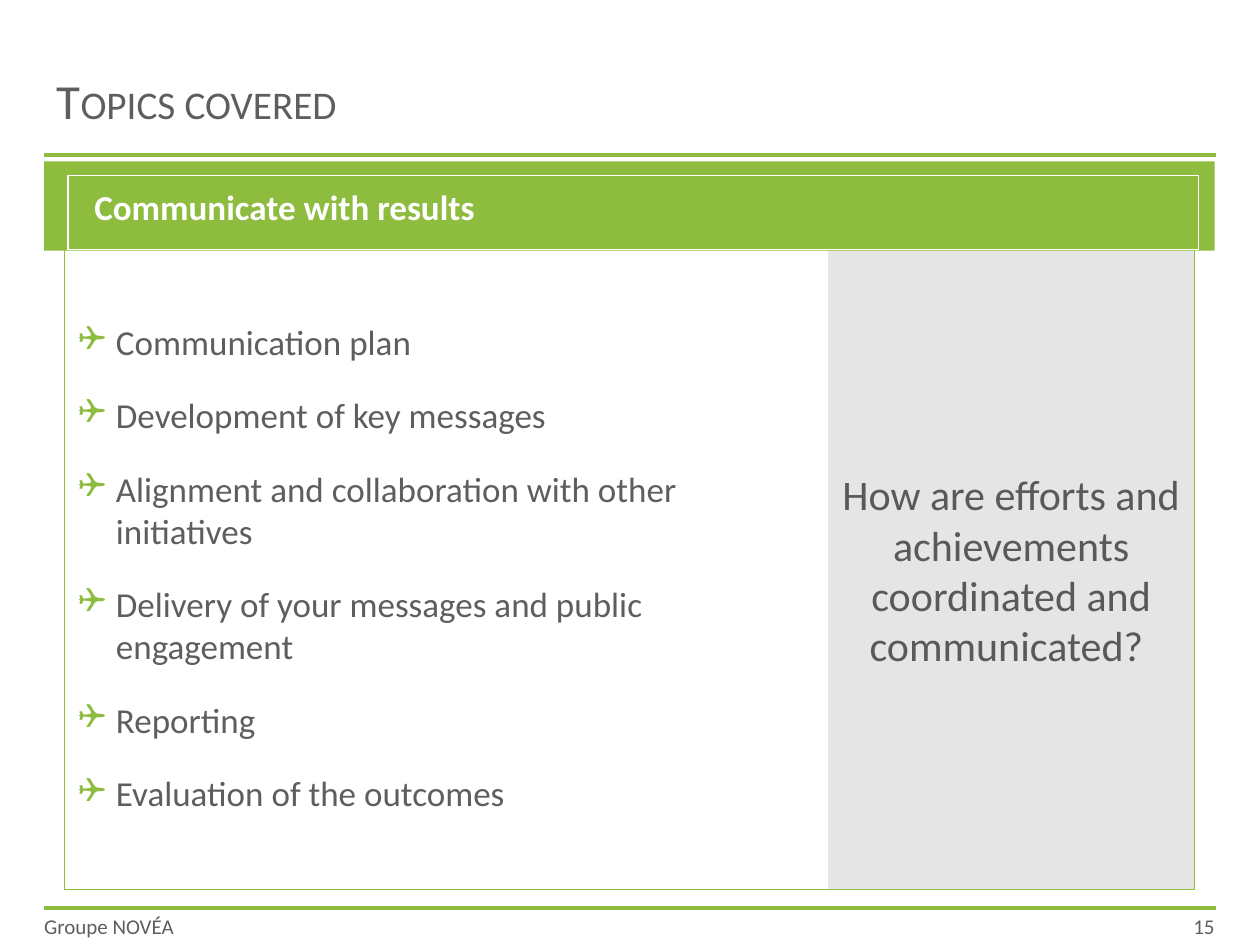
from lxml import etree
from pptx import Presentation
from pptx import util as u
from pptx.dml.color import RGBColor
from pptx.enum import shapes, text
from pptx.oxml.ns import qn

COLORS = {"green": "8EBC3F", "gray": "D9D9D9", "white": "FFFFFF",
          "ink": "5C5E5F", "question": "595959"}
TOPICS = [
    "Communication plan",
    "Development of key messages",
    "Alignment and collaboration with other initiatives",
    "Delivery of your messages and public engagement",
    "Reporting",
    "Evaluation of the outcomes",
]
LEFT, RIGHT = 0.35, 9.65


def rgb(name):
    return RGBColor.from_string(COLORS[name])


def add_text(p, content, size=20, color="ink", bold=False, small_caps=False,
             align=text.PP_ALIGN.LEFT, indent=0):
    p.alignment = align
    if indent:
        p._p.get_or_add_pPr().set("marL", str(u.Inches(indent)))
    r = p.add_run()
    r.text = content
    r.font.name = "Calibri"
    r.font.size = u.Pt(size)
    r.font.bold = bold
    r.font.color.rgb = rgb(color)
    if small_caps:
        r._r.get_or_add_rPr().set("cap", "small")


class Deck:
    font_bullet = "❑"

    def __init__(self, prs):
        self.s = prs.slides.add_slide(prs.slide_layouts[1])

    def frame(self, sp, anchor, insets=(0.1, 0.05, 0.1, 0.05)):
        tf = sp.text_frame
        tf.word_wrap = True
        tf.auto_size = text.MSO_AUTO_SIZE.NONE
        tf.vertical_anchor = anchor
        (tf.margin_left, tf.margin_top,
         tf.margin_right, tf.margin_bottom) = map(u.Inches, insets)
        return tf

    def place(self, sp, box):
        sp.left, sp.top, sp.width, sp.height = map(u.Inches, box)

    def title(self, content, box):
        sp = self.s.shapes.title
        self.place(sp, box)
        tf = self.frame(sp, text.MSO_ANCHOR.MIDDLE)
        add_text(tf.paragraphs[0], content, size=28, small_caps=True)

    def bullets(self, items, box):
        sp = self.s.placeholders[1]
        self.place(sp, box)
        tf = self.frame(sp, text.MSO_ANCHOR.TOP)
        for i, item in enumerate(items):
            p = tf.add_paragraph() if i else tf.paragraphs[0]
            add_text(p, item, indent=0.3)
            p.space_before, p.space_after = u.Pt(12), u.Pt(6)
            pPr = p._p.get_or_add_pPr()
            pPr.set("indent", str(u.Inches(-0.3)))
            clr = etree.SubElement(pPr, qn("a:buClr"))
            etree.SubElement(clr, qn("a:srgbClr"), val=COLORS["green"])
            etree.SubElement(pPr, qn("a:buFont"), typeface="Wingdings")
            etree.SubElement(pPr, qn("a:buChar"), char=self.font_bullet)

    def rule(self, y):
        line = self.s.shapes.add_connector(
            shapes.MSO_CONNECTOR.STRAIGHT, u.Inches(LEFT), u.Inches(y),
            u.Inches(RIGHT), u.Inches(y))
        line.line.color.rgb = rgb("green")
        line.line.width = u.Pt(2.25)
        etree.SubElement(line._element.spPr, qn("a:effectLst"))

    def rect(self, box, fill=None, line=None, opacity=None, content=None,
             **fmt):
        sp = self.s.shapes.add_shape(shapes.MSO_SHAPE.RECTANGLE,
                                     *map(u.Inches, box))
        sp.shadow.inherit = False
        if fill:
            sp.fill.solid()
            sp.fill.fore_color.rgb = rgb(fill)
        else:
            sp.fill.background()
        if opacity:
            clr = sp._element.spPr.find(qn("a:solidFill"))[0]
            etree.SubElement(clr, qn("a:alpha"), val=str(opacity * 1000))
        if line:
            sp.line.color.rgb = rgb(line)
            sp.line.width = u.Pt(0.75)
        else:
            sp.line.fill.background()
        if content:
            tf = self.frame(sp, text.MSO_ANCHOR.MIDDLE)
            add_text(tf.paragraphs[0], content, **fmt)

    def label(self, content, box, **fmt):
        sp = self.s.shapes.add_textbox(*map(u.Inches, box))
        tf = self.frame(sp, text.MSO_ANCHOR.MIDDLE, (0, 0, 0, 0))
        add_text(tf.paragraphs[0], content, size=12, **fmt)


def main():
    prs = Presentation()
    prs.slide_width, prs.slide_height = u.Inches(10), u.Inches(7.5)
    deck = Deck(prs)

    # Title and rules
    deck.title("Topics covered", (LEFT, 0.3, 9.29, 0.98))
    for y in (1.23, 7.21):
        deck.rule(y)

    # Question panel and content outline
    deck.rect((6.57, 1.98, 2.91, 5.08), fill="gray", line="white", opacity=68,
              content="How are efforts and achievements coordinated and "
                      "communicated? ",
              size=24, color="question", align=text.PP_ALIGN.CENTER)
    deck.rect((0.51, 1.39, 8.97, 5.67), line="green")

    # Topic list
    deck.bullets(TOPICS, (0.52, 2.49, 6.06, 4.06))

    # Section banner
    deck.rect((LEFT, 1.28, 9.29, 0.71), fill="green",
              content="Communicate with results", color="white", bold=True,
              indent=0.3)
    deck.rect((0.54, 1.39, 8.97, 0.59), line="white")

    # Footer
    deck.label("Groupe NOVÉA", (LEFT, 7.21, 1.81, 0.28))
    deck.label("15", (7.99, 7.21, 1.65, 0.28), align=text.PP_ALIGN.RIGHT)

    prs.save("out.pptx")


if __name__ == "__main__":
    main()
